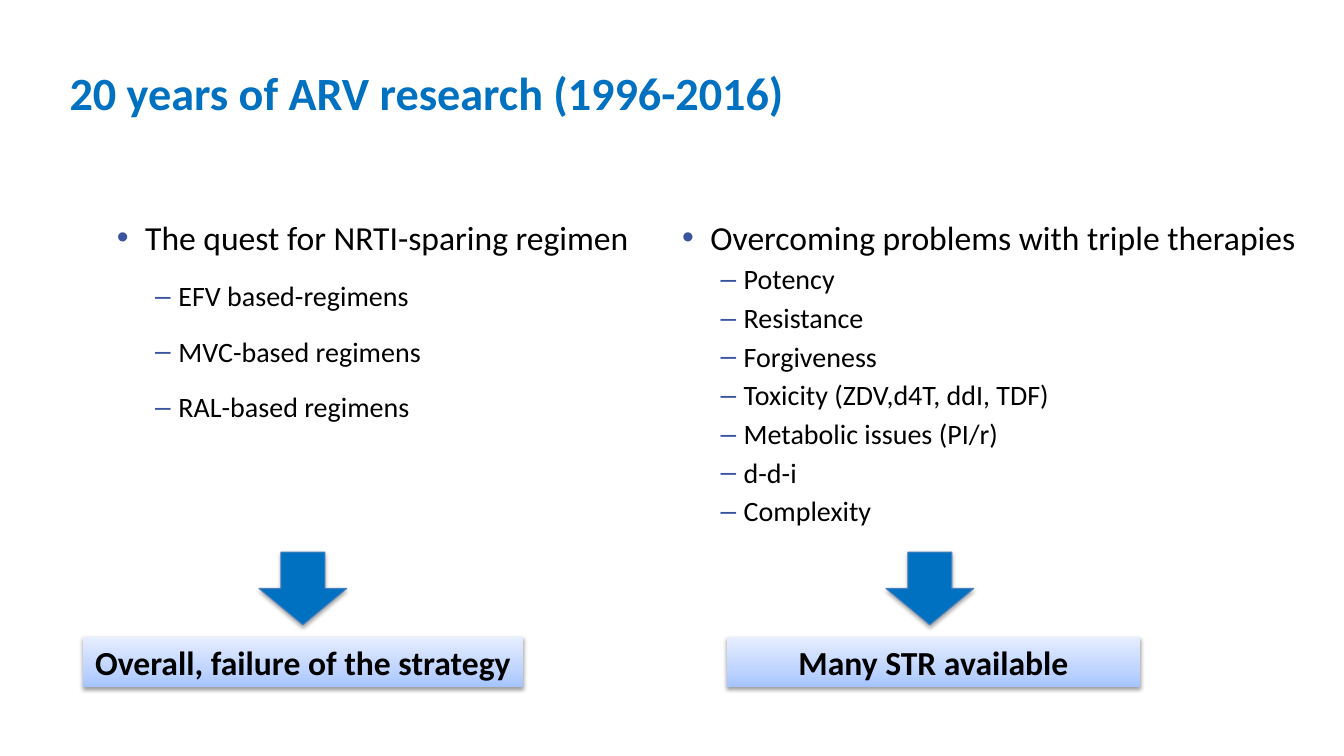
from copy import deepcopy
from dataclasses import dataclass

from lxml.etree import SubElement
from pptx import Presentation
from pptx.dml.color import RGBColor
from pptx.enum.shapes import MSO_SHAPE
from pptx.enum.text import MSO_ANCHOR, MSO_AUTO_SIZE, PP_ALIGN
from pptx.oxml.ns import qn
from pptx.util import Inches, Pt

# Slide grid: 160 columns by 90 rows of square cells
CELL = Inches(1) / 12
COLUMNS, ROWS = 160, 90
FONT = "Calibri"
BLUE, BLACK, BULLET_BLUE, ARROW_EDGE = "0070C0", "000000", "3C549F", "4B7EBC"
BANNER_STOPS = [(0, "A4C4FF"), (0.35, "BFD4FF"), (1, "E6EEFF")]
# Per level: bullet, text indent in inches, hanging indent in inches, size
LEVELS = [("•", 0.28, 0.28, 24), ("–", 0.61, 0.23, 20)]


@dataclass
class Box:
    x: float
    y: float
    w: float
    h: float

    def inner(self, dx, dy, w, h):
        return Box(self.x + dx, self.y + dy, w, h)

    def emu(self):
        return [round(v * CELL) for v in (self.x, self.y, self.w, self.h)]


def rgb(value):
    return RGBColor.from_string(value)


def style(paragraph, size, color=BLACK, bold=False):
    for run in paragraph.runs:
        run.font.name = FONT
        run.font.size = Pt(size)
        run.font.bold = bold
        run.font.color.rgb = rgb(color)


def add_bullet(paragraph, level):
    symbol, indent, hanging, _ = LEVELS[level]
    paragraph.level = level
    props = paragraph._p.get_or_add_pPr()
    props.set("marL", str(Inches(indent)))
    props.set("indent", str(-Inches(hanging)))
    bullet_color = SubElement(props, qn("a:buClr"))
    SubElement(bullet_color, qn("a:srgbClr"), val=BULLET_BLUE)
    SubElement(props, qn("a:buFont"), typeface="Arial")
    SubElement(props, qn("a:buChar"), char=symbol)


def add_shadow(shape, opacity, distance):
    shape.shadow.inherit = False
    effects = shape._element.spPr.find(qn("a:effectLst"))
    shadow = SubElement(effects, qn("a:outerShdw"), blurRad=str(Pt(3.1)),
                        dist=str(Pt(distance)), dir="5400000", rotWithShape="0")
    color = SubElement(shadow, qn("a:srgbClr"), val=BLACK)
    SubElement(color, qn("a:alpha"), val=str(opacity * 1000))


def add_title(slide, box, text):
    frame = slide.shapes.add_textbox(*box.emu()).text_frame
    frame.word_wrap = True
    frame.vertical_anchor = MSO_ANCHOR.MIDDLE
    frame.text = text
    style(frame.paragraphs[0], 33, BLUE, bold=True)


def add_topic_list(slide, box, heading, topics, space_after):
    frame = slide.shapes.add_textbox(*box.emu()).text_frame
    frame.word_wrap = True
    for i, text in enumerate([heading, *topics]):
        level = min(i, 1)
        paragraph = frame.paragraphs[0] if i == 0 else frame.add_paragraph()
        paragraph.text = text
        add_bullet(paragraph, level)
        if i:
            paragraph.space_before = Pt(3.6)
        paragraph.space_after = Pt(space_after)
        style(paragraph, LEVELS[level][3])


def add_down_arrow(slide, box):
    arrow = slide.shapes.add_shape(MSO_SHAPE.DOWN_ARROW, *box.emu())
    arrow.fill.solid()
    arrow.fill.fore_color.rgb = rgb(BLUE)
    arrow.line.color.rgb = rgb(ARROW_EDGE)
    arrow.line.width = Pt(0.75)
    add_shadow(arrow, 35, 1.8)


def add_banner(slide, box, text, wrap):
    banner = slide.shapes.add_shape(MSO_SHAPE.RECTANGLE, *box.emu())
    banner.fill.gradient()
    banner.fill.gradient_angle = 90
    first_stop = next(banner._element.spPr.iter(qn("a:gs")))
    first_stop.addnext(deepcopy(first_stop))
    for stop, (position, color) in zip(banner.fill.gradient_stops, BANNER_STOPS):
        stop.position = position
        stop.color.rgb = rgb(color)
    banner.line.fill.background()
    add_shadow(banner, 38, 1.6)
    frame = banner.text_frame
    frame.word_wrap = wrap
    frame.auto_size = MSO_AUTO_SIZE.SHAPE_TO_FIT_TEXT
    frame.text = text
    frame.paragraphs[0].alignment = PP_ALIGN.CENTER
    style(frame.paragraphs[0], 24, bold=True)


def add_strategy(slide, box, heading, topics, outcome, list_dx, arrow_dx,
                 banner_dx, banner_width, space_after=0, wrap=True):
    """Topic list on top, arrow below it, outcome banner at the foot of the box."""
    add_topic_list(slide, box.inner(list_dx, 0, box.w - list_dx, 36),
                   heading, topics, space_after)
    add_banner(slide, box.inner(banner_dx, box.h - 6, banner_width, 6), outcome, wrap)
    add_down_arrow(slide, box.inner(arrow_dx, box.h - 16.1, 10.44, 8.64))


def main():
    deck = Presentation()
    deck.slide_width, deck.slide_height = round(COLUMNS * CELL), round(ROWS * CELL)
    slide = deck.slides.add_slide(deck.slide_layouts[6])

    add_title(slide, Box(7.1, 3.4, 110.4, 15), "20 years of ARV research (1996-2016)")

    # Left: sparing regimens
    add_strategy(
        slide, Box(9.84, 25.2, 68.3, 56.64),
        "The quest for NRTI-sparing regimen",
        ["EFV based-regimens", "MVC-based regimens", "RAL-based regimens"],
        "Overall, failure of the strategy",
        list_dx=2.9, arrow_dx=21, banner_dx=0, banner_width=52.44,
        space_after=12, wrap=False)

    # Right: triple therapies
    add_strategy(
        slide, Box(80.04, 25.2, 75.6, 56.64),
        "Overcoming problems with triple therapies",
        ["Potency", "Resistance", "Forgiveness", "Toxicity (ZDV,d4T, ddI, TDF)",
         "Metabolic issues (PI/r)", "d-d-i", "Complexity"],
        "Many STR available",
        list_dx=0, arrow_dx=25.44, banner_dx=6.48, banner_width=49.2)

    deck.save("out.pptx")


if __name__ == "__main__":
    main()
